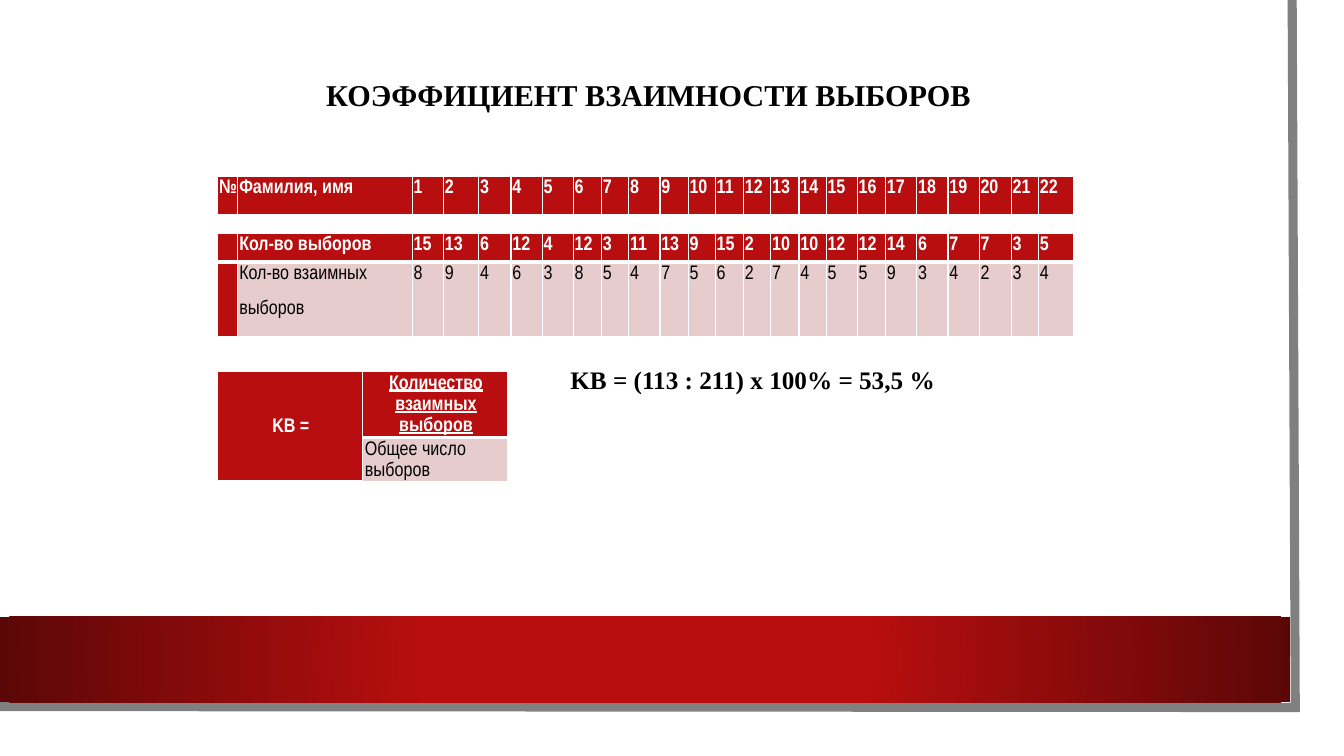
from dataclasses import dataclass
from itertools import product

from lxml.etree import SubElement
from pptx import Presentation
from pptx.dml.color import RGBColor
from pptx.dml.fill import FillFormat
from pptx.enum.shapes import MSO_SHAPE
from pptx.enum.text import MSO_ANCHOR, MSO_AUTO_SIZE, PP_ALIGN
from pptx.oxml.ns import qn
from pptx.shapes.autoshape import Shape
from pptx.slide import Slide
from pptx.table import Table
from pptx.text.text import TextFrame
from pptx.util import Pt

RED, DARK, PINK = "B80E0F", "5C0707", "E6CCCC"
WHITE, BLACK, GREY = "FFFFFF", "000000", "808080"
SERIF, NARROW = "Times New Roman", "Arial Narrow"
WIDTHS = [14.4, 124.6, 22.3, 25.2, 23, 22.3, 22.3, 20.2, 19.4, 22.3, 20.2, 19.4,
          20.2, 19.4, 20.2, 19.4, 22.3, 20.2, 22.3, 22.3, 22.3, 23, 19.4, 25.2]
PICKS = "15 13 6 12 4 12 3 11 13 9 15 2 10 10 12 12 14 6 7 7 3 5".split()
MUTUAL = "8 9 4 6 3 8 5 4 7 5 6 2 7 4 5 5 9 3 4 2 3 4".split()


@dataclass
class Grid:
    """A table with red heads and pink body cells."""
    top: float
    cols: list[float]
    rows: list[float]
    text: list[list[str]]
    pads: tuple[float, float, float, float] = (1, 0, 1, 0)
    after: float = 10
    ratio: bool = False


GRIDS = [
    Grid(126, WIDTHS, [28], [["№", "Фамилия, имя", *map(str, range(1, 23))]]),
    Grid(167, WIDTHS, [20.2, 53.3],
         [["", "Кол-во выборов", *PICKS],
          ["", "Кол-во взаимных\nвыборов", *MUTUAL]]),
    Grid(265, [103.7, 103.7], [47.5, 31.7],
         [["KB =", "Количество взаимных выборов"], ["", "Общее число выборов"]],
         (1.5, 0.7, 0.7, 0.7), 6, True),
]


def paint(fill: FillFormat, tint: str) -> None:
    """Fill with one solid colour."""
    fill.solid()
    fill.fore_color.rgb = RGBColor.from_string(tint)


def write(frame: TextFrame, text: str, *, font: str = NARROW, size: float = 14,
          tint: str = WHITE, bold: bool = True, under: bool = False,
          align: PP_ALIGN = PP_ALIGN.LEFT, lead: float = 1.15,
          after: float = 0) -> None:
    """Write formatted text, one paragraph a line."""
    frame.word_wrap = True
    for num, line in enumerate(text.split("\n")):
        para = frame.add_paragraph() if num else frame.paragraphs[0]
        para.alignment, para.line_spacing = align, lead
        para.space_before, para.space_after = Pt(0), Pt(after)
        run = para.add_run()
        run.text = line
        run.font.name, run.font.size = font, Pt(size)
        run.font.bold, run.font.underline = bold, under
        paint(run.font.fill, tint)


def dress(table: Table, grid: Grid, row: int, col: int) -> None:
    """Format and fill one table cell."""
    cell = table.cell(row, col)
    light = row > 0 and col > 0
    cell.margin_left, cell.margin_top, cell.margin_right, cell.margin_bottom = map(Pt, grid.pads)
    cell.vertical_anchor = MSO_ANCHOR.MIDDLE if grid.ratio else MSO_ANCHOR.TOP
    props = cell._tc.get_or_add_tcPr()
    for side in "LRTB":
        thick = (side == "B" and row == 0) or (side == "T" and light)
        edge = SubElement(props, qn(f"a:ln{side}"), w=str(Pt(3 if thick else 1)))
        solid = SubElement(edge, qn("a:solidFill"))
        SubElement(solid, qn("a:srgbClr"), val=WHITE)
    paint(cell.fill, PINK if light else RED)
    if not cell.is_spanned:
        write(cell.text_frame, grid.text[row][col], tint=BLACK if light else WHITE,
              bold=not light, under=grid.ratio and row == 0 and col == 1,
              align=PP_ALIGN.CENTER if grid.ratio and not light else PP_ALIGN.LEFT,
              after=grid.after)


def draw(slide: Slide, grid: Grid) -> None:
    """Draw one grid as a table."""
    table = slide.shapes.add_table(
        len(grid.rows), len(grid.cols), Pt(155.5), Pt(grid.top),
        Pt(sum(grid.cols)), Pt(sum(grid.rows))).table
    table.first_row = table.horz_banding = False
    for col, width in zip(table.columns, grid.cols):
        col.width = Pt(width)
    for row, height in zip(table.rows, grid.rows):
        row.height = Pt(height)
    if grid.ratio:
        table.cell(0, 0).merge(table.cell(1, 0))
    for row, col in product(range(len(grid.rows)), range(len(grid.cols))):
        dress(table, grid, row, col)


def block(slide: Slide, left: float, top: float, width: float, height: float) -> Shape:
    """Add a plain rectangle without a line."""
    shape = slide.shapes.add_shape(
        MSO_SHAPE.RECTANGLE, Pt(left), Pt(top), Pt(width), Pt(height))
    shape.shadow.inherit = False
    shape.line.fill.background()
    return shape


def scene(slide: Slide) -> None:
    """Draw the sheet, its grey edge and the red band."""
    paint(block(slide, 0, 0, 943, 523.5).fill, WHITE)

    pen = slide.shapes.build_freeform(Pt(923), Pt(0))
    pen.add_line_segments([(Pt(925.2), Pt(505.4)), (Pt(-2.2), Pt(504.7))], close=False)
    edge = pen.convert_to_shape()
    edge.shadow.inherit = False
    edge.fill.background()
    edge.line.width = Pt(6.5)
    paint(edge.line.fill, GREY)
    SubElement(edge.element.spPr.find(qn("a:ln")), qn("a:miter"), lim="800000")

    band = block(slide, 0, 440.6, 921.6, 61.2)
    band.fill.gradient()
    for stop, spot, tint in zip(band.fill.gradient_stops, (0.34, 1), (RED, DARK)):
        stop.position = spot
        stop.color.rgb = RGBColor.from_string(tint)
    blend = band.element.spPr.find(qn("a:gradFill"))
    blend.remove(blend.find(qn("a:lin")))
    ring = SubElement(blend, qn("a:path"), path="circle")
    SubElement(ring, qn("a:fillToRect"), l="50000", t="50000", r="50000", b="50000")


def main() -> None:
    """Build and save the slide."""
    deck = Presentation()
    deck.slide_width, deck.slide_height = Pt(960), Pt(540)
    slide = deck.slides.add_slide(deck.slide_layouts[5])
    scene(slide)

    title = slide.shapes.title
    title.element.getparent().append(title.element)
    title.left, title.top, title.width, title.height = map(Pt, (54, 54, 818.6, 90.7))
    title.text_frame.vertical_anchor = MSO_ANCHOR.TOP
    write(title.text_frame, "КОЭФФИЦИЕНТ ВЗАИМНОСТИ ВЫБОРОВ", font=SERIF,
          size=21.6, tint=BLACK, align=PP_ALIGN.CENTER, lead=0.9)

    for grid in GRIDS:
        draw(slide, grid)

    sum_box = slide.shapes.add_textbox(Pt(400.3), Pt(253.4), Pt(318.2), Pt(31))
    sum_box.text_frame.auto_size = MSO_AUTO_SIZE.SHAPE_TO_FIT_TEXT
    write(sum_box.text_frame, "KB = (113 : 211) х 100% = 53,5 %", font=SERIF,
          size=18, tint=BLACK, after=6)
    deck.save("out.pptx")


if __name__ == "__main__":
    main()
